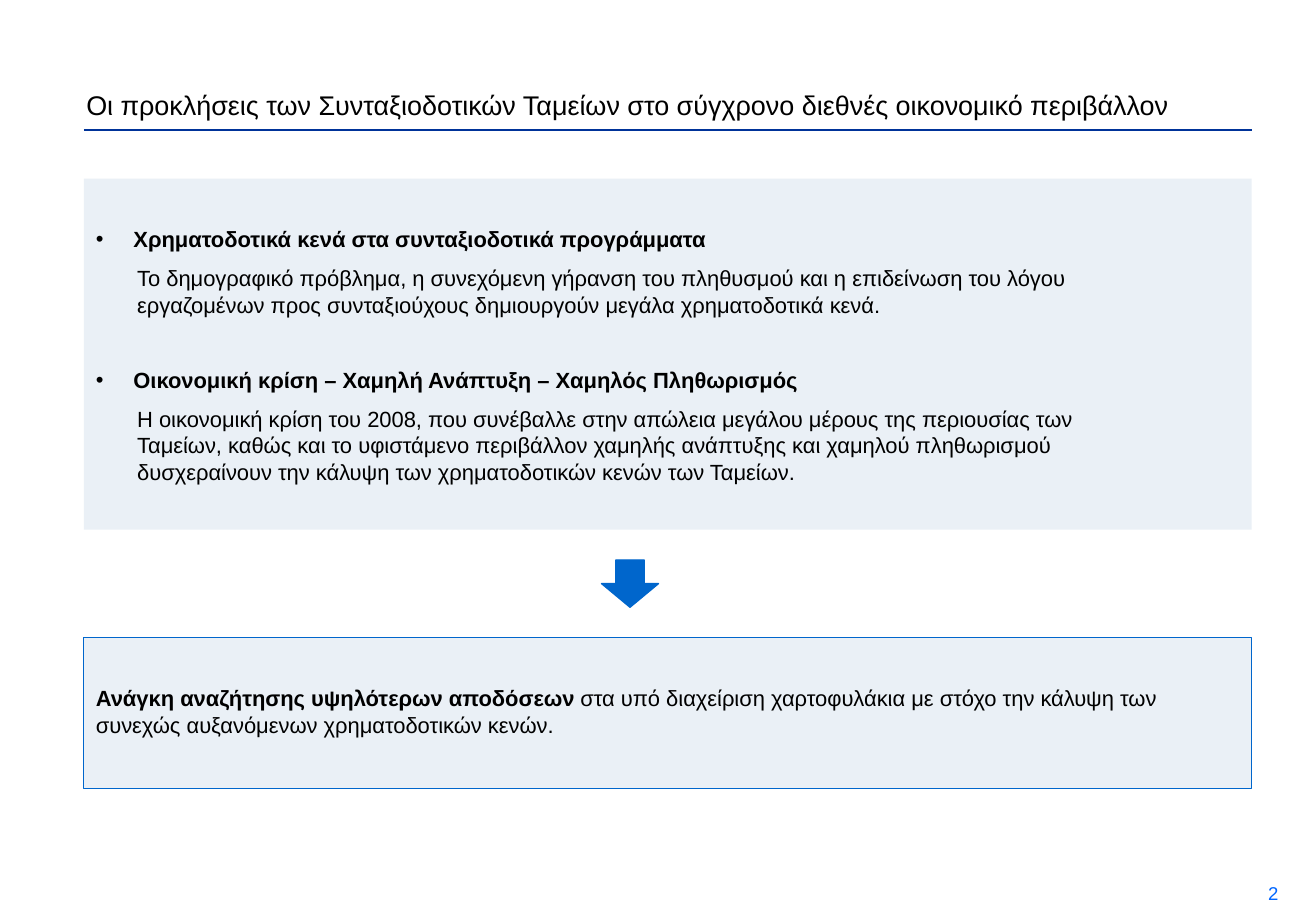
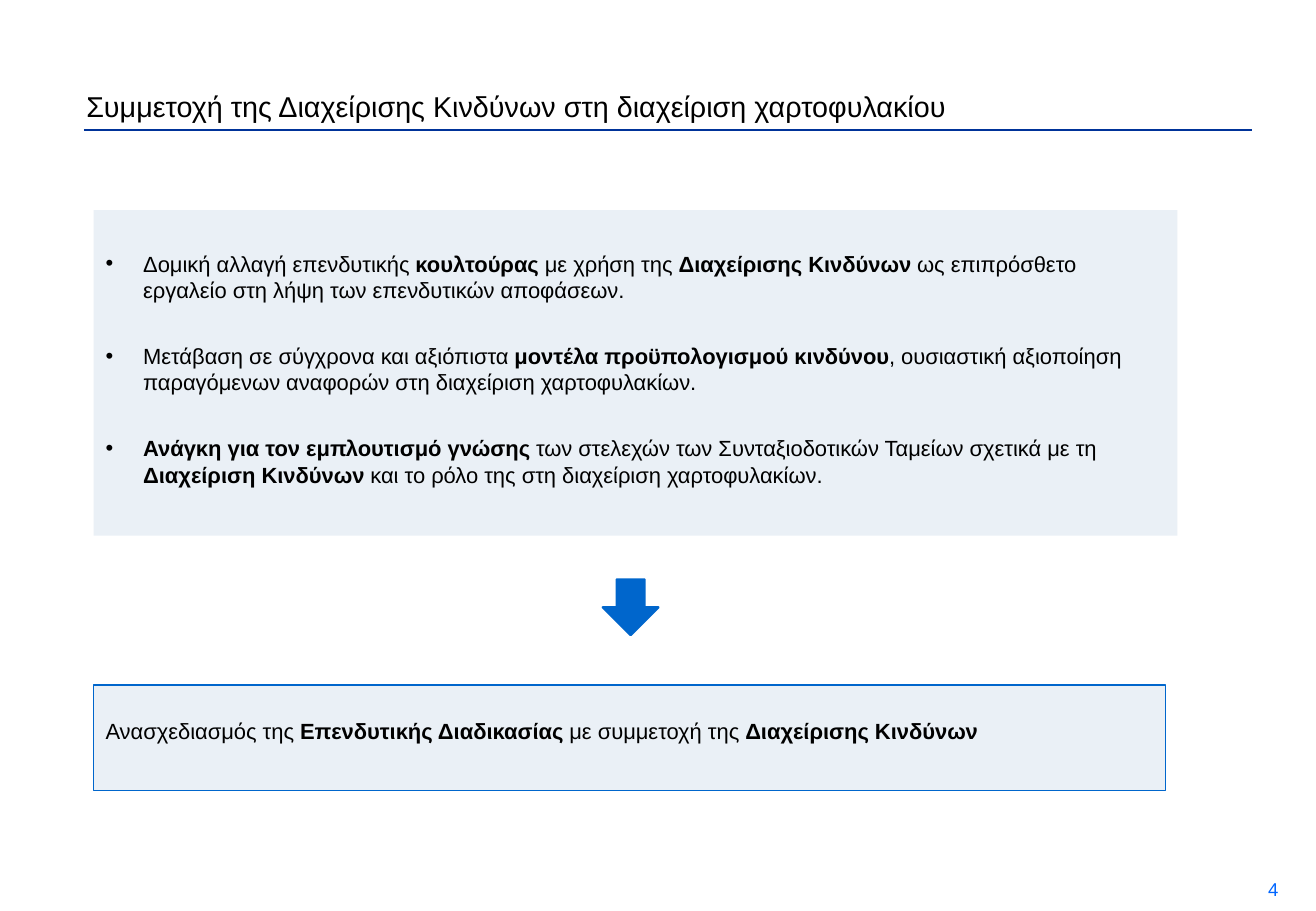
from pptx import Presentation
from pptx.dml.color import RGBColor
from pptx.enum.shapes import MSO_CONNECTOR, MSO_SHAPE
from pptx.enum.text import MSO_ANCHOR, MSO_AUTO_SIZE, PP_ALIGN
from pptx.oxml.ns import qn
from pptx.util import Pt
from lxml.etree import SubElement

PX = 9144
BLACK = RGBColor(0x00, 0x00, 0x00)
NAVY = RGBColor(0x00, 0x33, 0x99)
BLUE = RGBColor(0x00, 0x66, 0xCC)
NUMBER_BLUE = RGBColor(0x00, 0x66, 0xFF)
PALE = RGBColor(0xEA, 0xF0, 0xF6)
FONT = "Arial"
BODY_SIZE = 13
BULLET_INDENT = 31
DETAIL_INDENT = 34


def px(*lengths):
    return [round(n * PX) for n in lengths]


def style(r, size, color, bold=False):
    r.font.name = FONT
    r.font.size = Pt(size)
    r.font.bold = bold
    r.font.color.rgb = color


def set_frame(tf, top, anchor=MSO_ANCHOR.TOP):
    tf.word_wrap = True
    tf.auto_size = MSO_AUTO_SIZE.NONE
    tf.vertical_anchor = anchor
    tf.margin_left, tf.margin_right, tf.margin_top, tf.margin_bottom = px(10, 10, top, 5)


def set_indent(p, left, bullet):
    pPr = p._p.get_or_add_pPr()
    pPr.set("marL", str(left * PX))
    if bullet:
        pPr.set("indent", str(-left * PX))
        SubElement(pPr, qn("a:buFont"), typeface=FONT)
        SubElement(pPr, qn("a:buChar"), char="•")


def add_runs(p, pieces):
    for text, bold in pieces:
        for i, line in enumerate(text.split("\n")):
            if i:
                p.add_line_break()
            r = p.add_run()
            r.text = line
            style(r, BODY_SIZE, BLACK, bold)


def add_frame(s, title, size, number, number_top):
    sp = s.shapes.title
    sp.left, sp.top, sp.width, sp.height = px(61, 68, 984, 39)
    sp.text_frame.text = title
    set_frame(sp.text_frame, 5)
    p = sp.text_frame.paragraphs[0]
    p.alignment = PP_ALIGN.LEFT
    style(p.runs[0], size, BLACK)

    rule = s.shapes.add_connector(MSO_CONNECTOR.STRAIGHT, *px(69, 107, 1030, 107))
    rule.line.color.rgb = NAVY
    rule.line.width = Pt(1.5)
    SubElement(rule._element.spPr, qn("a:effectLst"))

    sp = s.shapes.add_textbox(*px(1030, number_top, 32, 36))
    set_frame(sp.text_frame, 5, MSO_ANCHOR.MIDDLE)
    p = sp.text_frame.paragraphs[0]
    p.text = number
    p.alignment = PP_ALIGN.RIGHT
    style(p.runs[0], 11, NUMBER_BLUE)


def add_panel(s, box, top, paragraphs, border=None):
    sp = s.shapes.add_shape(MSO_SHAPE.RECTANGLE, *px(*box))
    sp.shadow.inherit = False
    sp.fill.solid()
    sp.fill.fore_color.rgb = PALE
    if border:
        sp.line.color.rgb = BLUE
        sp.line.width = Pt(border)
    else:
        sp.line.fill.background()
    tf = sp.text_frame
    set_frame(tf, top)
    for i, (pieces, left, bullet, gap) in enumerate(paragraphs):
        p = tf.add_paragraph() if i else tf.paragraphs[0]
        set_indent(p, left, bullet)
        p.alignment = PP_ALIGN.LEFT
        if gap:
            p.space_before = Pt(gap)
        add_runs(p, pieces)


def add_arrow(s, box, weight):
    sp = s.shapes.add_shape(MSO_SHAPE.DOWN_ARROW, *px(*box))
    sp.shadow.inherit = False
    sp.fill.solid()
    sp.fill.fore_color.rgb = BLUE
    sp.line.color.rgb = BLUE
    sp.line.width = Pt(weight)


def add_challenges(s):
    add_frame(s, "Οι προκλήσεις των Συνταξιοδοτικών Ταμείων στο σύγχρονο διεθνές οικονομικό περιβάλλον",
              16, "2", 717)
    topics = [
        ("Χρηματοδοτικά κενά στα συνταξιοδοτικά προγράμματα",
         "Το δημογραφικό πρόβλημα, η συνεχόμενη γήρανση του πληθυσμού και η επιδείνωση του λόγου\n"
         "εργαζομένων προς συνταξιούχους δημιουργούν μεγάλα χρηματοδοτικά κενά."),
        ("Οικονομική κρίση – Χαμηλή Ανάπτυξη – Χαμηλός Πληθωρισμός",
         "Η οικονομική κρίση του 2008, που συνέβαλλε στην απώλεια μεγάλου μέρους της περιουσίας των\n"
         "Ταμείων, καθώς και το υφιστάμενο περιβάλλον χαμηλής ανάπτυξης και χαμηλού πληθωρισμού\n"
         "δυσχεραίνουν την κάλυψη των χρηματοδοτικών κενών των Ταμείων."),
    ]
    paragraphs = []
    for i, (heading, detail) in enumerate(topics):
        paragraphs.append(([(heading, True)], BULLET_INDENT, True, 29 * i))
        paragraphs.append(([(detail, False)], DETAIL_INDENT, False, 7.5))
    add_panel(s, (69, 147, 961, 289), 39, paragraphs)
    add_arrow(s, (495, 461, 47, 39), 0.75)
    conclusion = [
        ("Ανάγκη αναζήτησης υψηλότερων αποδόσεων ", True),
        ("στα υπό διαχείριση χαρτοφυλάκια με στόχο την κάλυψη των συνεχώς αυξανόμενων "
         "χρηματοδοτικών κενών.", False),
    ]
    add_panel(s, (69, 525, 961, 124), 39, [(conclusion, 0, False, 0)], 0.5)


def add_participation(s):
    add_frame(s, "Συμμετοχή της Διαχείρισης Κινδύνων στη διαχείριση χαρτοφυλακίου", 17, "4", 714)
    points = [
        [("Δομική αλλαγή επενδυτικής ", False), ("κουλτούρας", True), (" με χρήση της ", False),
         ("Διαχείρισης Κινδύνων ", True),
         ("ως επιπρόσθετο εργαλείο στη λήψη των επενδυτικών αποφάσεων.", False)],
        [("Μετάβαση σε σύγχρονα και αξιόπιστα ", False), ("μοντέλα προϋπολογισμού κινδύνου", True),
         (", ουσιαστική αξιοποίηση παραγόμενων αναφορών στη διαχείριση χαρτοφυλακίων.", False)],
        [("Ανάγκη για τον εμπλουτισμό γνώσης ", True),
         ("των στελεχών των Συνταξιοδοτικών Ταμείων σχετικά με τη ", False),
         ("Διαχείριση Κινδύνων ", True),
         ("και το ρόλο της στη διαχείριση χαρτοφυλακίων.", False)],
    ]
    paragraphs = [(pieces, BULLET_INDENT, True, 23.5 if i else 0) for i, pieces in enumerate(points)]
    add_panel(s, (77, 173, 892, 268), 33, paragraphs)
    conclusion = [
        ("Ανασχεδιασμός της ", False), ("Επενδυτικής Διαδικασίας ", True),
        ("με συμμετοχή της ", False), ("Διαχείρισης Κινδύνων", True),
    ]
    add_panel(s, (77, 564, 882, 87), 27, [(conclusion, 0, False, 0)], 0.75)
    add_arrow(s, (496, 477, 46, 46), 1.25)


def main():
    prs = Presentation()
    prs.slide_width, prs.slide_height = px(1083, 750)
    for build in (add_challenges, add_participation):
        build(prs.slides.add_slide(prs.slide_layouts[5]))
    prs.save("out.pptx")


if __name__ == "__main__":
    main()
